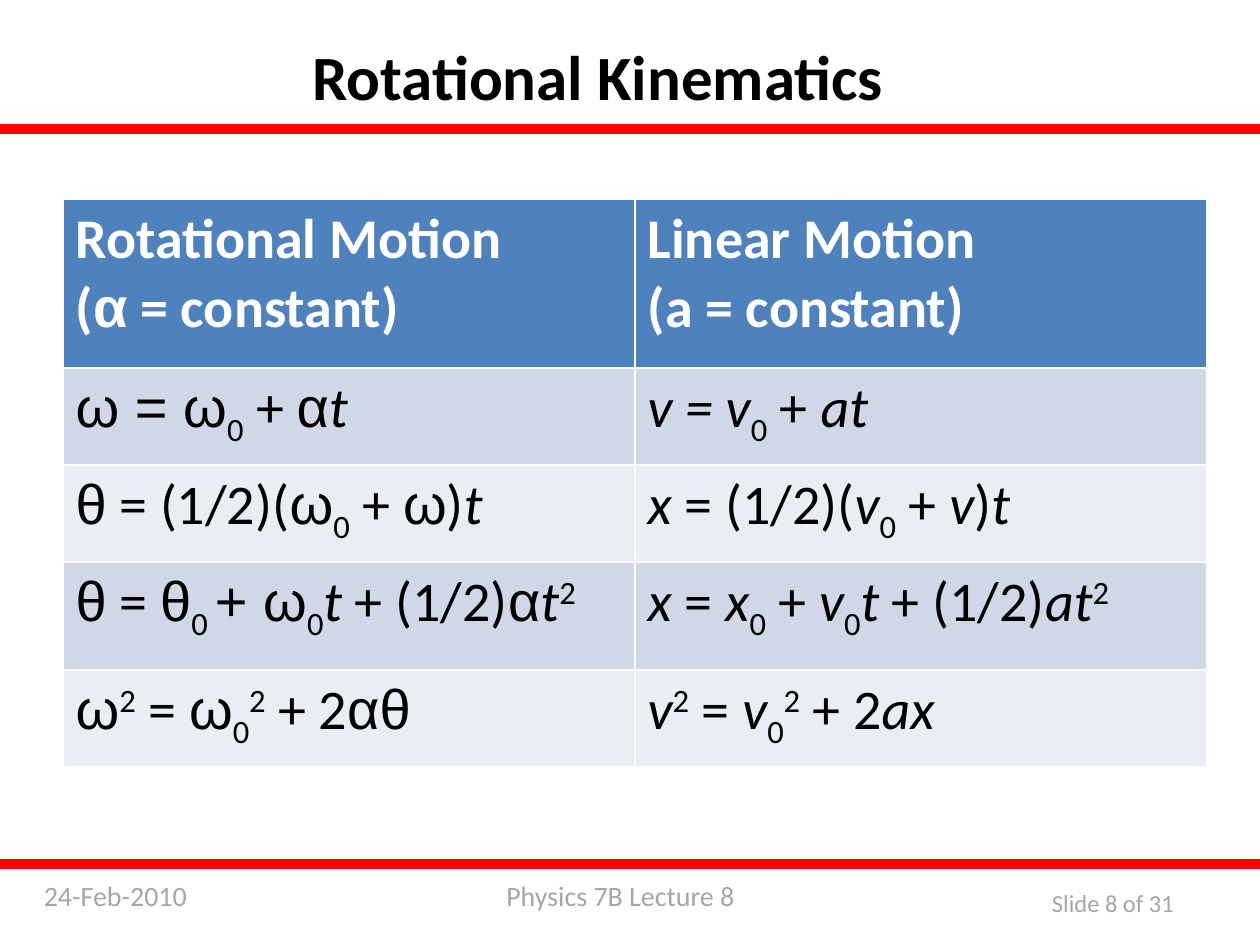
from functools import partial

from pptx import Presentation
from pptx.dml.color import RGBColor
from pptx.enum.shapes import MSO_SHAPE
from pptx.enum.text import MSO_ANCHOR, MSO_AUTO_SIZE, PP_ALIGN
from pptx.util import Inches, Pt

BLACK = RGBColor(0x00, 0x00, 0x00)
WHITE = RGBColor(0xFF, 0xFF, 0xFF)
RED = RGBColor(0xFF, 0x00, 0x00)
GREY = RGBColor(0xA6, 0xA6, 0xA6)
HEADER_BLUE = RGBColor(0x4F, 0x81, 0xBD)
BANDS = (RGBColor(0xD0, 0xD8, 0xE8), RGBColor(0xE9, 0xED, 0xF4))

SLIDE_WIDTH, SLIDE_HEIGHT = 10, 7.5
COLUMN_WIDTH = 4.54
ROW_HEIGHTS = (1.34, 0.77, 0.77, 0.86, 0.77)


def piece(text, font="Calibri", italic=False, baseline=0):
    return text, font, italic, baseline


plain = piece
greek = partial(piece, font="Arial")
italic = partial(piece, italic=True)
SUB_0 = piece("0", baseline=-25000)
SQUARED = piece("2", baseline=30000)

HEADERS = (
    ([plain("Rotational Motion")],
     [plain("("), greek("α"), plain(" = constant)")]),
    ([plain("Linear Motion")],
     [plain("(a = constant)")]),
)

EQUATIONS = (
    ([greek("ω = ω"), SUB_0, plain(" + "), greek("α"), italic("t")],
     [italic("v = v"), SUB_0, plain(" + "), italic("at")]),
    ([greek("θ"), plain(" = (1/2)("), greek("ω"), SUB_0, plain(" + "),
      greek("ω"), plain(")"), italic("t")],
     [italic("x"), plain(" = (1/2)("), italic("v"), SUB_0, plain(" + "),
      italic("v"), plain(")"), italic("t")]),
    ([greek("θ"), plain(" = "), greek("θ"), piece("0 ", baseline=-25000),
      greek("+ ω"), SUB_0, italic("t"), plain(" + (1/2)"), greek("α"),
      italic("t"), SQUARED],
     [italic("x"), plain(" = "), italic("x"), SUB_0, plain(" + "),
      italic("v"), SUB_0, italic("t "), plain("+ (1/2)"), italic("at"),
      SQUARED]),
    ([greek("ω"), SQUARED, plain(" = "), greek("ω"), SUB_0, SQUARED,
      plain(" + 2"), greek("αθ")],
     [italic("v"), SQUARED, plain(" = "), italic("v"), SUB_0, SQUARED,
      plain(" + 2"), italic("ax")]),
)


def style_font(font, size, color, bold=False):
    font.name = "Calibri"
    font.size = Pt(size)
    font.color.rgb = color
    font.bold = bold


def add_title(slide, text):
    title = slide.shapes.title
    title.left, title.top = Inches(2.35), Inches(0.25)
    title.width, title.height = Inches(4.79), Inches(0.71)
    frame = title.text_frame
    frame.text = text
    frame.word_wrap = False
    frame.auto_size = MSO_AUTO_SIZE.SHAPE_TO_FIT_TEXT
    frame.vertical_anchor = MSO_ANCHOR.TOP
    paragraph = frame.paragraphs[0]
    paragraph.alignment = PP_ALIGN.CENTER
    style_font(paragraph.font, 36, BLACK, bold=True)


def add_rule(slide, top):
    rule = slide.shapes.add_shape(
        MSO_SHAPE.RECTANGLE, 0, Inches(top), Inches(SLIDE_WIDTH), Inches(0.05))
    rule.shadow.inherit = False
    rule.fill.solid()
    rule.fill.fore_color.rgb = RED
    rule.line.color.rgb = RED
    rule.line.width = Pt(2)


def add_footer(slide, text, left, top, width, height, size):
    box = slide.shapes.add_textbox(
        Inches(left), Inches(top), Inches(width), Inches(height))
    frame = box.text_frame
    frame.text = text
    frame.word_wrap = False
    style_font(frame.paragraphs[0].font, size, GREY)


def write_pieces(paragraph, pieces, color, bold):
    style_font(paragraph.font, 32, color, bold)
    for text, font_name, is_italic, baseline in pieces:
        run = paragraph.add_run()
        run.text = text
        style_font(run.font, 32, color, bold)
        run.font.name = font_name
        run.font.italic = is_italic
        if baseline:
            run.font._element.set("baseline", str(baseline))


def fill_cell(cell, lines, fill, color, bold=False):
    cell.fill.solid()
    cell.fill.fore_color.rgb = fill
    frame = cell.text_frame
    for index, pieces in enumerate(lines):
        paragraph = frame.add_paragraph() if index else frame.paragraphs[0]
        write_pieces(paragraph, pieces, color, bold)


def add_equation_table(slide):
    table = slide.shapes.add_table(
        len(ROW_HEIGHTS), len(HEADERS), Inches(0.5), Inches(1.58),
        Inches(COLUMN_WIDTH * len(HEADERS)), Inches(sum(ROW_HEIGHTS))).table
    for column in table.columns:
        column.width = Inches(COLUMN_WIDTH)
    for row, height in zip(table.rows, ROW_HEIGHTS):
        row.height = Inches(height)
    for column, lines in enumerate(HEADERS):
        fill_cell(table.cell(0, column), lines, HEADER_BLUE, WHITE, bold=True)
    for row, equations in enumerate(EQUATIONS):
        for column, pieces in enumerate(equations):
            fill_cell(table.cell(row + 1, column), [pieces], BANDS[row % 2], BLACK)


def main():
    presentation = Presentation()
    presentation.slide_width = Inches(SLIDE_WIDTH)
    presentation.slide_height = Inches(SLIDE_HEIGHT)
    slide = presentation.slides.add_slide(presentation.slide_layouts[5])
    add_footer(slide, "Physics 7B Lecture 8", 3.92, 6.92, 2.04, 0.37, 16)
    add_footer(slide, "24-Feb-2010", 0.25, 6.92, 1.67, 0.37, 16)
    add_footer(slide, "Slide 8 of 31", 8.25, 7, 1.31, 0.34, 14)
    for top in (1, 6.83):
        add_rule(slide, top)
    add_title(slide, "Rotational Kinematics")
    add_equation_table(slide)
    presentation.save("out.pptx")


if __name__ == "__main__":
    main()
